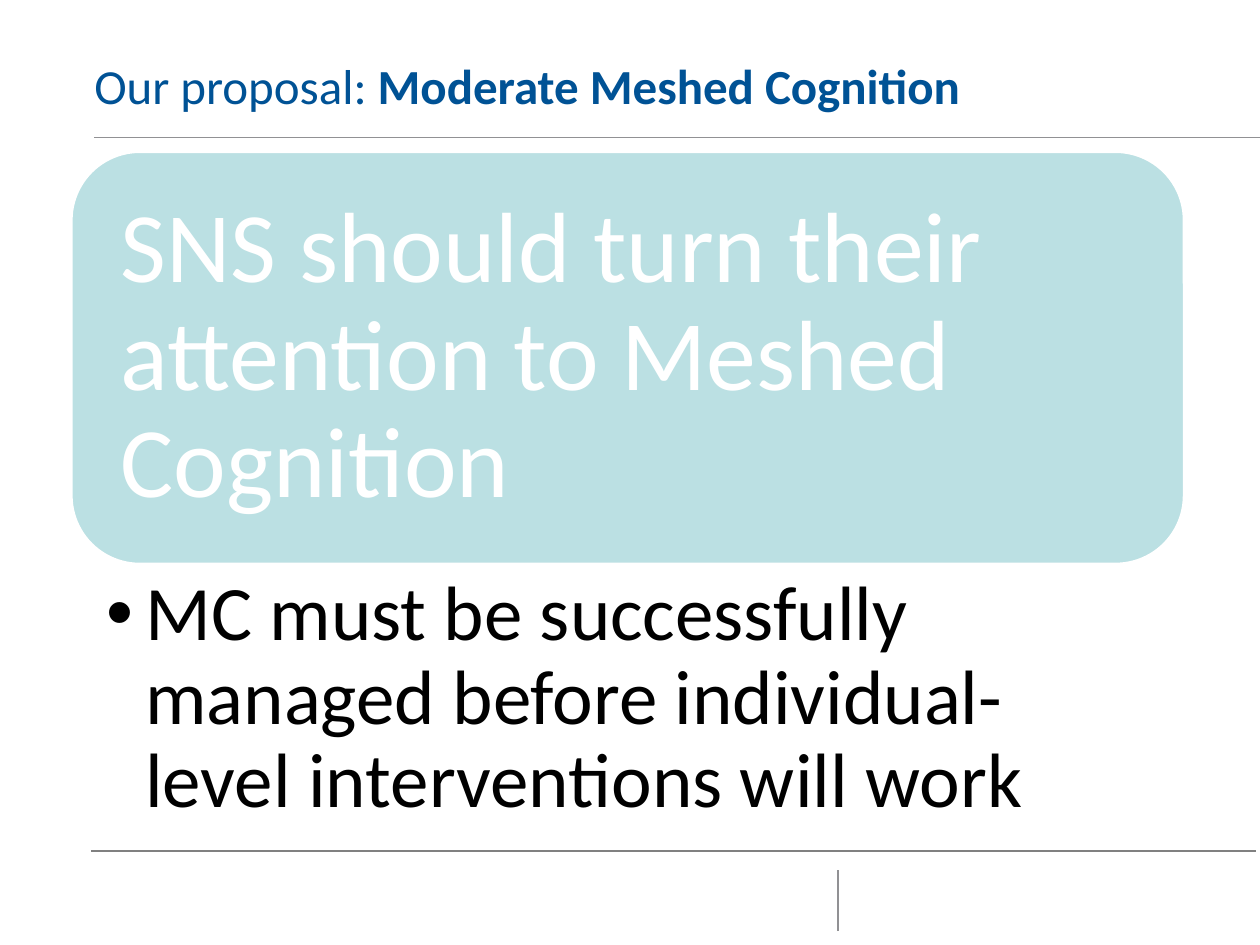
"""Build the Moderate Meshed Cognition proposal slide."""
from lxml.etree import SubElement
from pptx import Presentation
from pptx.dml.color import RGBColor as Rgb
from pptx.enum.shapes import MSO_CONNECTOR as Link, MSO_SHAPE as Preset
from pptx.enum.text import MSO_ANCHOR as Anchor, MSO_AUTO_SIZE as Fit, PP_ALIGN as Align
from pptx.oxml.ns import qn
from pptx.util import Cm, Pt

COLORS = {
    "title": "005295",
    "card": "BBE0E3",
    "white": "FFFFFF",
    "body": "000000",
    "rule": "919194",
    "footer": "808080",
}


class ProposalSlide:
    """Hold the style and the current slide."""

    font_name = "Calibri"

    def __init__(self, deck):
        """Add a title-only slide to the deck."""
        self.slide = deck.slides.add_slide(deck.slide_layouts[5])

    def color(self, key):
        """Return the named colour."""
        return Rgb.from_string(COLORS[key])

    def apply(self, target, formats):
        """Set every attribute in the dict of format values."""
        for attribute, value in formats.items():
            setattr(target, attribute, value)

    def frame(self, holder, margins, anchor=Anchor.TOP):
        """Format a text frame and return its first paragraph."""
        frame = holder.text_frame
        sides = ("margin_left", "margin_top", "margin_right", "margin_bottom")
        self.apply(frame, {"word_wrap": True, "auto_size": Fit.NONE, "vertical_anchor": anchor})
        self.apply(frame, dict(zip(sides, map(Cm, margins))))
        return frame.paragraphs[0]

    def add_words(self, paragraph, words, size, color, spacing, bold=False):
        """Add a run of left-aligned text."""
        self.apply(paragraph, {"alignment": Align.LEFT, "line_spacing": spacing})
        run = paragraph.add_run()
        run.text = words
        self.apply(run.font, {"name": self.font_name, "size": Pt(size), "bold": bold})
        run.font.color.rgb = self.color(color)

    def rule(self, start_x, start_y, end_x, end_y, color):
        """Draw a thin straight line."""
        ends = map(Cm, (start_x, start_y, end_x, end_y))
        rule = self.slide.shapes.add_connector(Link.STRAIGHT, *ends)
        rule.line.width = Pt(1)
        rule.line.color.rgb = self.color(color)
        SubElement(rule._element.spPr, qn("a:effectLst"))

    def title(self, box, lead, emphasis):
        """Place the title with its emphasised ending."""
        title = self.slide.shapes.title
        self.apply(title, dict(zip(("left", "top", "width", "height"), map(Cm, box))))
        heading = self.frame(title, (0, 0, 0, 0))
        self.add_words(heading, lead, 28, "title", Pt(32))
        self.add_words(heading, emphasis, 28, "title", Pt(32), bold=True)

    def card(self, box, words):
        """Draw the rounded card with its statement."""
        card = self.slide.shapes.add_shape(Preset.ROUNDED_RECTANGLE, *map(Cm, box))
        card.shadow.inherit = False
        card.fill.solid()
        card.fill.fore_color.rgb = self.color("card")
        card.line.color.rgb = self.color("white")
        card.line.width = Pt(2)
        statement = self.frame(card, (0.6,) * 4, Anchor.MIDDLE)
        self.add_words(statement, words, 57, "white", 0.9)

    def bullet(self, box, words):
        """Add a text box with one bulleted point."""
        holder = self.slide.shapes.add_textbox(*map(Cm, box))
        point = self.frame(holder, (0.71, 0.2, 1.12, 0.2))
        properties = point._p.get_or_add_pPr()
        properties.set("marL", str(Cm(0.79)))
        properties.set("indent", str(-Cm(0.79)))
        SubElement(properties, qn("a:buFont"), typeface="Arial")
        SubElement(properties, qn("a:buChar"), char="•")
        self.add_words(point, words, 44, "body", 0.9)


def main():
    """Build and save the deck."""
    deck = Presentation()
    deck.slide_width, deck.slide_height = Cm(25.4), Cm(19.05)
    proposal = ProposalSlide(deck)
    proposal.rule(1.83, 17.15, 25.32, 17.15, "footer")
    proposal.rule(1.9, 2.77, 25.4, 2.77, "rule")
    proposal.rule(16.89, 18.77, 16.89, 17.53, "rule")
    proposal.title((1.9, 1.17, 21.92, 2.64), "Our proposal: ", "Moderate Meshed Cognition")
    proposal.card((1.43, 3.05, 22.45, 8.33), "SNS should turn their attention to Meshed Cognition")
    proposal.bullet(
        (1.43, 11.38, 22.45, 5.41),
        "MC must be successfully managed before individual-level interventions will work",
    )
    deck.save("out.pptx")


if __name__ == "__main__":
    main()
